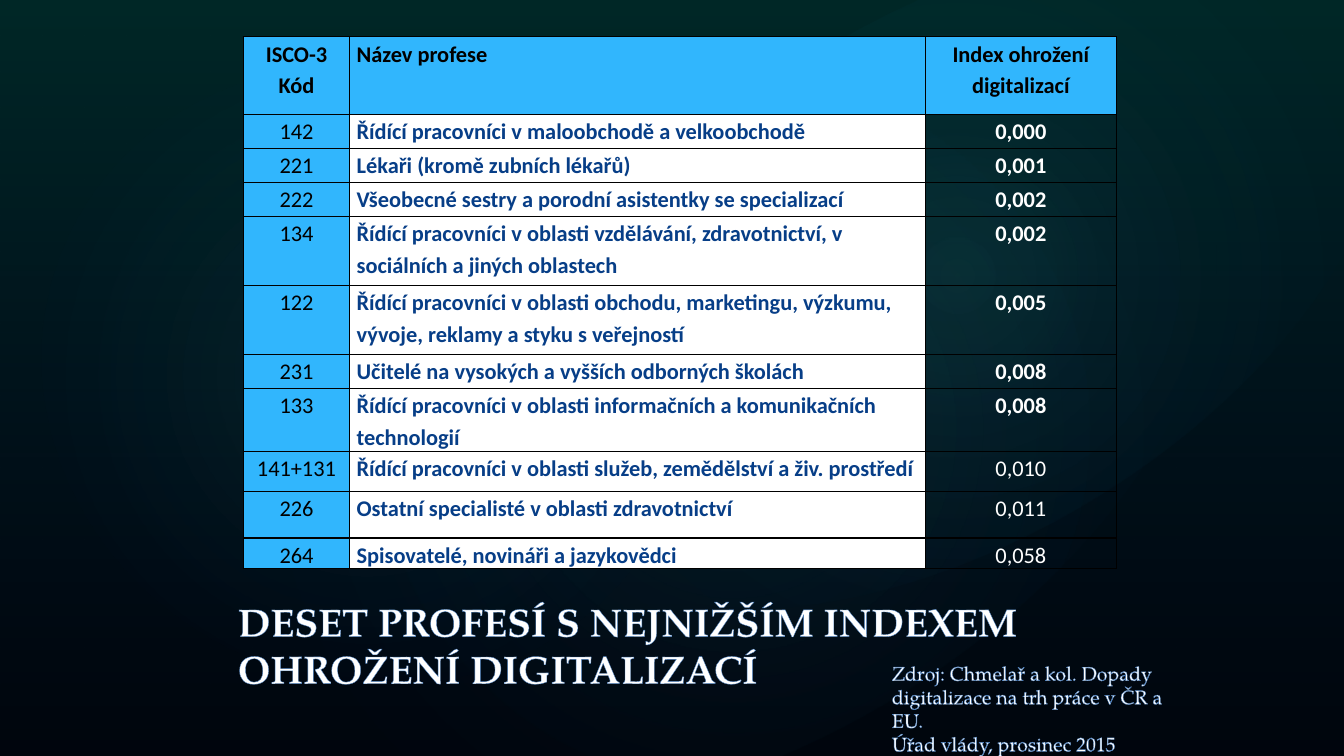
import lxml.etree
import pptx
import pptx.dml.color
import pptx.enum.shapes
import pptx.enum.text
import pptx.oxml.ns
import pptx.util

Pt = pptx.util.Pt
ALIGN = pptx.enum.text.PP_ALIGN
ANCHOR = pptx.enum.text.MSO_ANCHOR
SHAPE = pptx.enum.shapes.MSO_SHAPE
QN = pptx.oxml.ns.qn

WHITE, BLACK, NAVY, SKY, AQUA = "FFFFFF", "000000", "073E87", "31B6FD", "5AFBF8"
OUTLINE = "467AB8"
TITLE_FONT, TABLE_FONT = "TeX Gyre Pagella", "Calibri"


def color(value):
    return pptx.dml.color.RGBColor.from_string(value)


def add_element(parent, tag, **attributes):
    element = lxml.etree.SubElement(parent, QN(tag))
    for name, value in attributes.items():
        element.set(name, str(value))
    return element


def add_solid_fill(parent, value):
    add_element(add_element(parent, "a:solidFill"), "a:srgbClr", val=value)


def write(paragraph, text, font=TABLE_FONT, size=16, fill=WHITE, bold=False,
          outline=None, align=ALIGN.LEFT, spacing=None):
    paragraph.alignment = align
    if spacing:
        paragraph.line_spacing = spacing
    for index, line in enumerate(text.split("\n")):
        if index:
            paragraph.add_line_break()
        run = paragraph.add_run()
        run.text = line
        run.font.name, run.font.size, run.font.bold = font, Pt(size), bold
        run.font.color.rgb = color(fill)
        if outline:
            properties = run.font._element
            line_element = add_element(properties, "a:ln", w=Pt(0.83))
            add_solid_fill(line_element, outline)
            properties.insert(0, line_element)


class SlideBuilder:
    def __init__(self, presentation, background):
        self.slide = presentation.slides.add_slide(presentation.slide_layouts[6])
        self.slide.background.fill.solid()
        self.slide.background.fill.fore_color.rgb = color(background)

    def gradient_shape(self, kind, box, stops, rotation=0, radial=False):
        """Stops are (position, color, opacity), all numbers in percent."""
        shape = self.slide.shapes.add_shape(kind, *map(Pt, box))
        shape.rotation = rotation
        shape.shadow.inherit = False
        shape.line.fill.background()
        gradient = lxml.etree.Element(QN("a:gradFill"), rotWithShape="1")
        stop_list = add_element(gradient, "a:gsLst")
        for position, value, opacity in stops:
            stop = add_element(stop_list, "a:gs", pos=position * 1000)
            stop_color = add_element(stop, "a:srgbClr", val=value)
            add_element(stop_color, "a:alpha", val=opacity * 1000)
        if radial:
            center = add_element(gradient, "a:path", path="circle")
            add_element(center, "a:fillToRect", l=50000, t=50000, r=50000, b=50000)
        else:
            add_element(gradient, "a:lin", ang=90 * 60000, scaled=0)
        shape._element.spPr.find(QN("a:prstGeom")).addnext(gradient)

    def text_box(self, box, texts, anchor=ANCHOR.TOP, **style):
        frame = self.slide.shapes.add_textbox(*map(Pt, box)).text_frame
        frame.word_wrap = True
        frame.vertical_anchor = anchor
        for index, text in enumerate(texts):
            paragraph = frame.add_paragraph() if index else frame.paragraphs[0]
            write(paragraph, text, font=TITLE_FONT, outline=OUTLINE, **style)

    def table(self, left, top, widths, heights):
        frame = self.slide.shapes.add_table(
            len(heights), len(widths), Pt(left), Pt(top), Pt(sum(widths)), Pt(sum(heights)))
        table = frame.table
        table.first_row = table.horz_banding = False
        for column, width in zip(table.columns, widths):
            column.width = Pt(width)
        for row, height in zip(table.rows, heights):
            row.height = Pt(height)
        return table

    def cell(self, cell, text, background=None, **style):
        cell.margin_left = cell.margin_right = Pt(5)
        cell.margin_top = cell.margin_bottom = 0
        properties = cell._tc.get_or_add_tcPr()
        for side in ("a:lnL", "a:lnR", "a:lnT", "a:lnB"):
            add_solid_fill(add_element(properties, side, w=Pt(1)), BLACK)
        if background:
            cell.fill.solid()
            cell.fill.fore_color.rgb = color(background)
        else:
            cell.fill.background()
        write(cell.text_frame.paragraphs[0], text, spacing=1.15, **style)


HEADERS = ("ISCO-3 Kód", "Název profese", "Index ohrožení digitalizací")
# Code, profession, index, row height
PROFESSIONS = [
    ("142", "Řídící pracovníci v maloobchodě a velkoobchodě", "0,000", 24.3),
    ("221", "Lékaři (kromě zubních lékařů)", "0,001", 24.3),
    ("222", "Všeobecné sestry a porodní asistentky se specializací", "0,002", 24.3),
    ("134", "Řídící pracovníci v oblasti vzdělávání, zdravotnictví, v sociálních a jiných oblastech",
     "0,002", 49.4),
    ("122", "Řídící pracovníci v oblasti obchodu, marketingu, výzkumu, vývoje, reklamy a styku "
     "s veřejností", "0,005", 49.4),
    ("231", "Učitelé na vysokých a vyšších odborných školách", "0,008", 24.3),
    ("133", "Řídící pracovníci v oblasti informačních a komunikačních technologií", "0,008", 44.8),
    ("141+131", "Řídící pracovníci v oblasti služeb, zemědělství a živ. prostředí", "0,010", 28.6),
    ("226", "Ostatní specialisté v oblasti zdravotnictví", "0,011", 33.4),
    ("264", "Spisovatelé, novináři a jazykovědci", "0,058", 22),
]
BOLD_INDEX_ROWS = 7


def main():
    presentation = pptx.Presentation()
    presentation.slide_width, presentation.slide_height = Pt(960), Pt(540)
    builder = SlideBuilder(presentation, BLACK)

    # Background glow
    builder.gradient_shape(SHAPE.RECTANGLE, (0, 0, 960, 540),
                           [(0, "03706E", 36), (100, NAVY, 10)])
    for box, rotation, opacity in (
            ((144, 82, 760, 449), 328.7, 7),
            ((44, 33, 436, 470), 294.3, 8),
            ((344, 9.5, 680, 374.5), 328.7, 8)):
        builder.gradient_shape(SHAPE.OVAL, box, [(0, AQUA, opacity), (58, NAVY, 0), (100, NAVY, 0)],
                               rotation, radial=True)

    # Title
    builder.text_box((162.8, 435, 595.5, 62.5),
                     ["DESET PROFESÍ S NEJNIŽŠÍM INDEXEM\nOHROŽENÍ DIGITALIZACÍ"],
                     anchor=ANCHOR.BOTTOM, size=28, bold=True)

    # Table of professions
    heights = [55.4] + [profession[-1] for profession in PROFESSIONS]
    table = builder.table(173.8, 26.2, (76, 411.3, 136.3), heights)
    alignments = (ALIGN.CENTER, ALIGN.LEFT, ALIGN.CENTER)
    for column, (header, align) in enumerate(zip(HEADERS, alignments)):
        builder.cell(table.cell(0, column), header, SKY, fill=BLACK, bold=True, align=align)
    for row, profession in enumerate(PROFESSIONS, start=1):
        styles = ((SKY, BLACK, False), (WHITE, NAVY, True), (None, WHITE, row <= BOLD_INDEX_ROWS))
        for column, (background, fill, bold) in enumerate(styles):
            builder.cell(table.cell(row, column), profession[column], background,
                         fill=fill, bold=bold, align=alignments[column])

    # Source note
    builder.text_box((630, 468.7, 209.5, 75),
                     ["Zdroj: Chmelař a kol. Dopady digitalizace na trh práce v ČR a EU.",
                      "Úřad vlády, prosinec 2015"], size=14)

    presentation.save("out.pptx")


if __name__ == "__main__":
    main()
